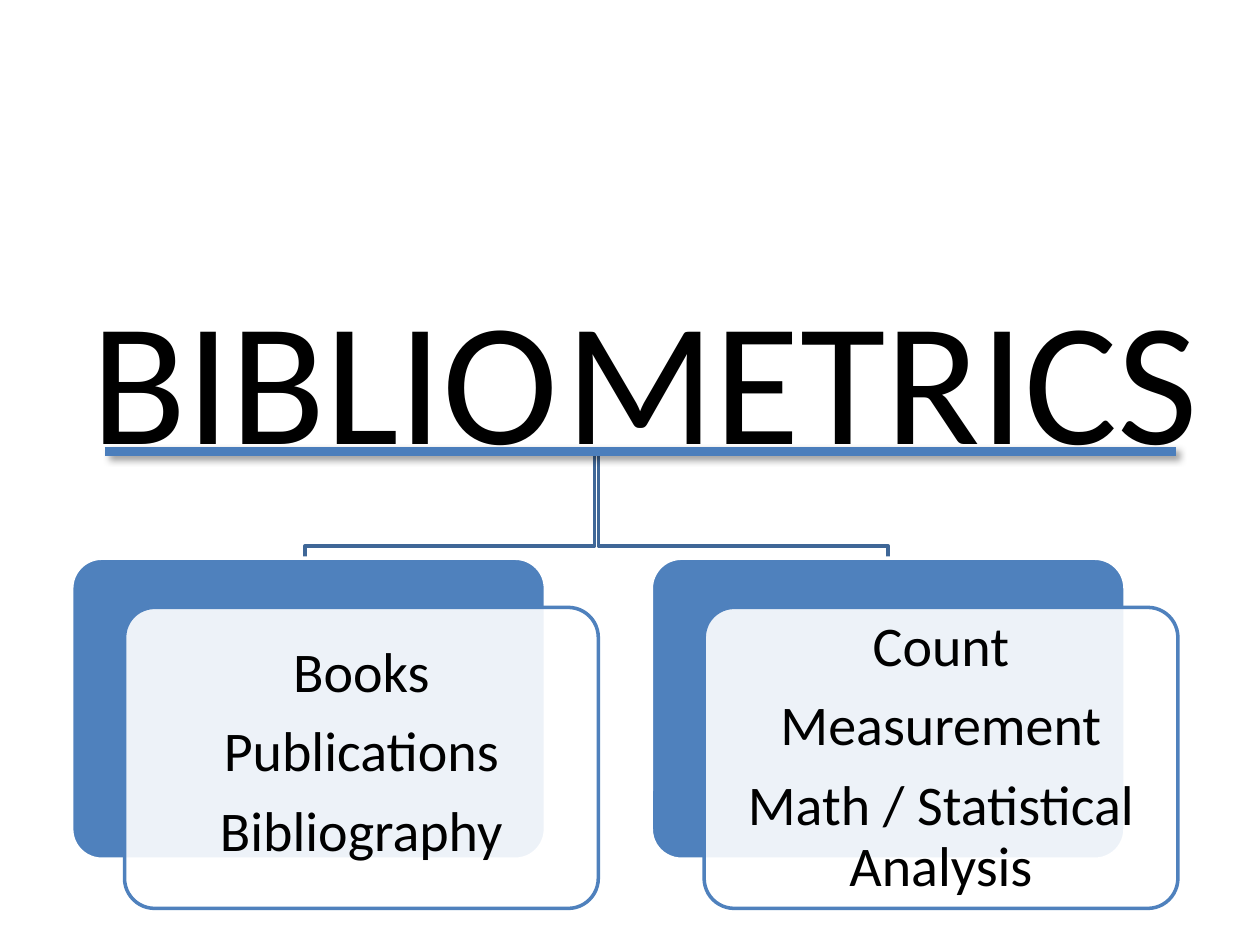
from lxml import etree
from pptx import Presentation
from pptx.dml.color import RGBColor
from pptx.enum.shapes import MSO_CONNECTOR, MSO_SHAPE
from pptx.enum.text import MSO_ANCHOR, PP_ALIGN
from pptx.oxml import parse_xml
from pptx.oxml.ns import nsdecls, qn
from pptx.util import Pt

ROUNDED = MSO_SHAPE.ROUNDED_RECTANGLE
STRAIGHT = MSO_CONNECTOR.STRAIGHT
CENTER = PP_ALIGN.CENTER
MIDDLE = MSO_ANCHOR.MIDDLE

BLACK = RGBColor(0x00, 0x00, 0x00)
WHITE = RGBColor(0xFF, 0xFF, 0xFF)
BLUE = RGBColor(0x4F, 0x81, 0xBD)
BRANCH_BLUE = RGBColor(0x3F, 0x67, 0x97)
RULE_BLUE = RGBColor(0x4B, 0x7E, 0xBC)

CARD_WIDTH, CARD_HEIGHT = 270.7, 172
CARD_TOP = 319
FRONT_SHIFT_X, FRONT_SHIFT_Y = 30.2, 28.1
TEXT_MARGIN = 5
RULE_Y, ELBOW_Y, BRANCH_END_Y = 258, 312, 337


class SlideBuilder:
    font_name = "Calibri"
    line_width = 2

    def __init__(self, slide):
        self.slide = slide

    def text(self, left, top, width, height, lines, size,
             insets=(7.2, 3.6, 7.2, 3.6), line_spacing=1.0, space_after=0):
        """Add centred lines; insets run left, top, right, bottom."""
        box = self.slide.shapes.add_textbox(Pt(left), Pt(top), Pt(width), Pt(height))
        frame = box.text_frame
        frame.word_wrap = True
        frame.vertical_anchor = MIDDLE
        (frame.margin_left, frame.margin_top,
         frame.margin_right, frame.margin_bottom) = map(Pt, insets)
        for index, line in enumerate(lines):
            paragraph = frame.add_paragraph() if index else frame.paragraphs[0]
            paragraph.alignment = CENTER
            paragraph.line_spacing = line_spacing
            paragraph.space_after = Pt(space_after)
            run = paragraph.add_run()
            run.text = line
            run.font.name = self.font_name
            run.font.size = Pt(size)
            run.font.color.rgb = BLACK

    def panel(self, left, top, fill, outline, opacity=100):
        shape = self.slide.shapes.add_shape(
            ROUNDED, Pt(left), Pt(top), Pt(CARD_WIDTH), Pt(CARD_HEIGHT))
        shape.adjustments[0] = 0.1
        shape.shadow.inherit = False
        shape.fill.solid()
        shape.fill.fore_color.rgb = fill
        shape.line.color.rgb = outline
        shape.line.width = Pt(self.line_width)
        if opacity < 100:
            color = shape.fill._xPr.find(qn("a:solidFill"))[0]
            etree.SubElement(color, qn("a:alpha")).set("val", str(opacity * 1000))

    def card(self, left, lines, bottom_inset):
        """Add a blue panel with a white text panel shifted over it."""
        front_left, front_top = left + FRONT_SHIFT_X, CARD_TOP + FRONT_SHIFT_Y
        self.panel(left, CARD_TOP, BLUE, WHITE)
        self.panel(front_left, front_top, WHITE, BLUE, opacity=90)
        self.text(front_left + TEXT_MARGIN, front_top + TEXT_MARGIN,
                  CARD_WIDTH - 2 * TEXT_MARGIN, CARD_HEIGHT - 2 * TEXT_MARGIN,
                  lines, 32, (7.2, 7.2, 7.2, bottom_inset), 0.9, 11)

    def branch(self, start_x, end_x):
        builder = self.slide.shapes.build_freeform(Pt(start_x), Pt(RULE_Y))
        corners = [(start_x, ELBOW_Y), (end_x, ELBOW_Y), (end_x, BRANCH_END_Y)]
        builder.add_line_segments([(Pt(x), Pt(y)) for x, y in corners], close=False)
        shape = builder.convert_to_shape()
        shape.shadow.inherit = False
        shape.fill.background()
        shape.line.color.rgb = BRANCH_BLUE
        shape.line.width = Pt(self.line_width)

    def rule(self, left, right):
        """Add the thick line under the title, with a soft shadow."""
        line = self.slide.shapes.add_connector(
            STRAIGHT, Pt(left), Pt(RULE_Y), Pt(right), Pt(RULE_Y))
        line.line.color.rgb = RULE_BLUE
        line.line.width = Pt(5)
        line._element.spPr.append(parse_xml(
            f'<a:effectLst {nsdecls("a")}>'
            f'<a:outerShdw blurRad="{Pt(4)}" dist="{Pt(3)}" dir="2700000">'
            '<a:srgbClr val="000000"><a:alpha val="40000"/></a:srgbClr>'
            '</a:outerShdw></a:effectLst>'))


def main():
    presentation = Presentation()
    presentation.slide_width, presentation.slide_height = Pt(720), Pt(540)
    builder = SlideBuilder(presentation.slides.add_slide(presentation.slide_layouts[6]))

    builder.text(41.8, 156.2, 288, 116, ["BIBLIO"], 100)
    builder.text(306, 156.2, 396, 116, ["METRICS"], 100)
    builder.branch(342, 507.6)
    builder.branch(339.8, 174.2)
    builder.card(41, ["Books", "Publications", "Bibliography"], bottom_inset=12)
    builder.card(372.2, ["Count", "Measurement", "Math / Statistical Analysis"],
                 bottom_inset=7.2)
    builder.rule(60, 672)

    presentation.save("out.pptx")


if __name__ == "__main__":
    main()
